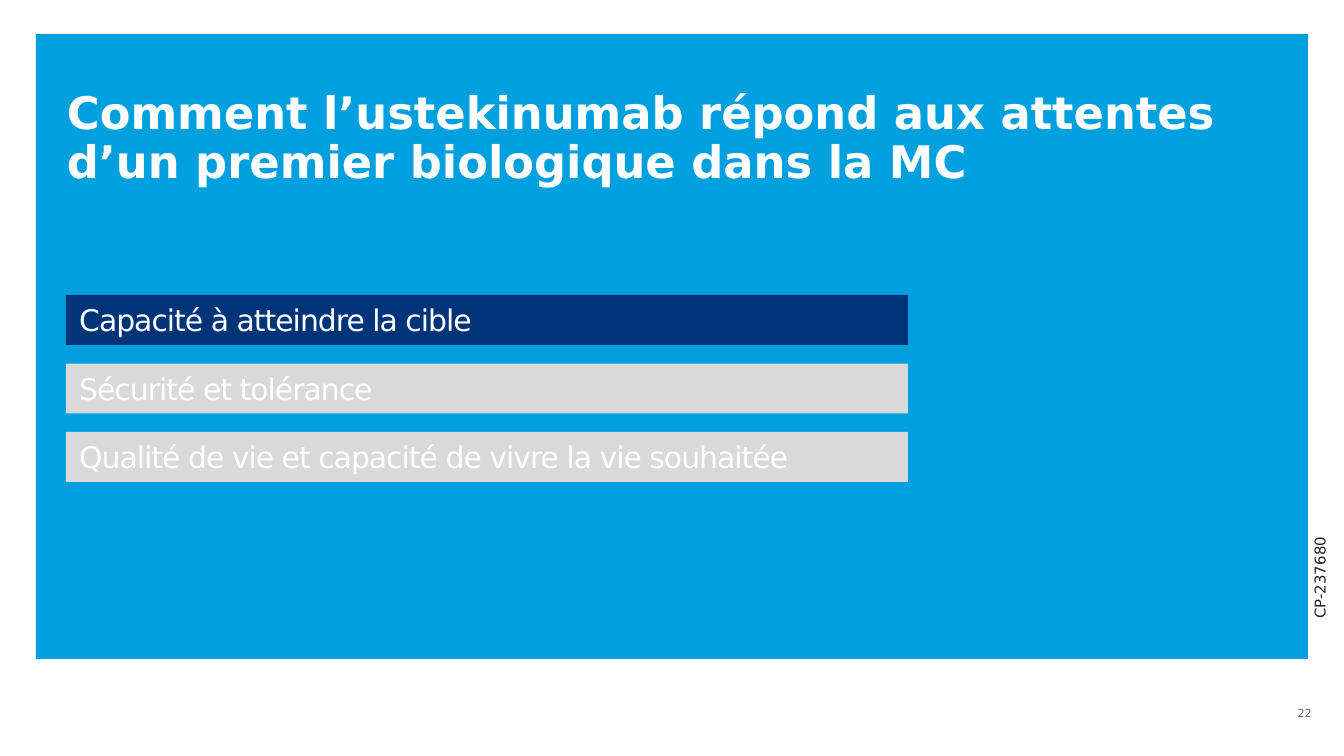
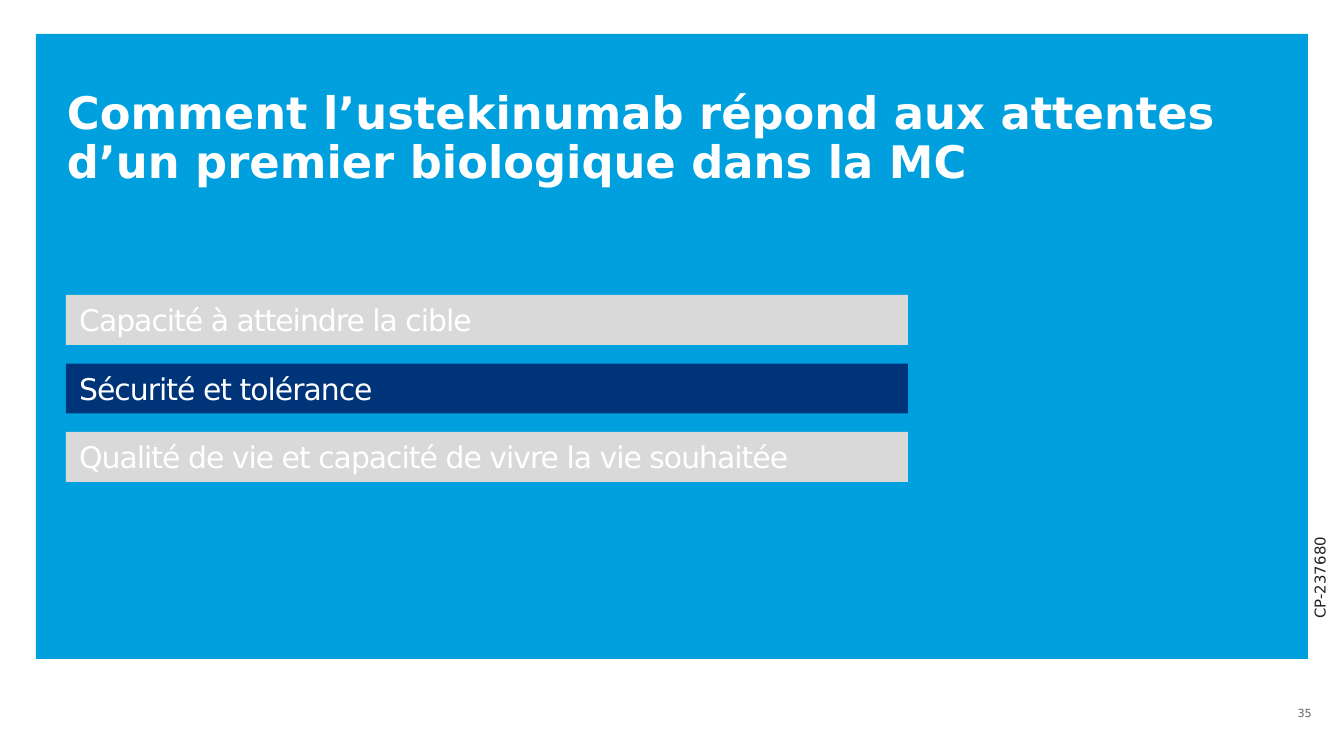
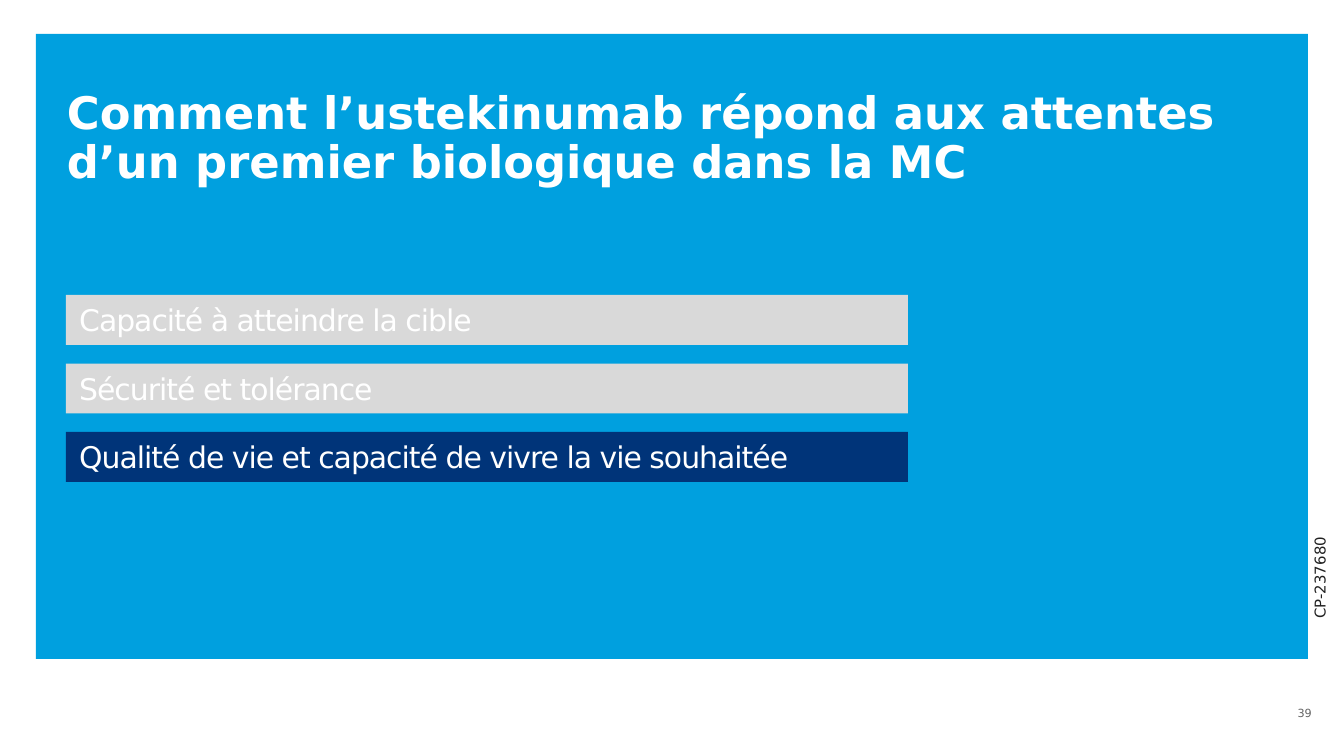
from pptx import Presentation, util as u
from pptx.dml.color import RGBColor
from pptx.enum import shapes, text

PX = 914400 / 134.4
FONT = "DejaVu Sans"
COLORS = {
    "panel": "00A0DF",
    "active": "003479",
    "inactive": "D9D9D9",
    "white": "FFFFFF",
    "page": "646464",
    "code": "212121",
}
TITLE = "Comment l’ustekinumab répond aux attentes d’un premier biologique dans la MC"
TOPICS = [
    "Capacité à atteindre la cible",
    "Sécurité et tolérance",
    "Qualité de vie et capacité de vivre la vie souhaitée",
]
PAGES = [22, 35, 39]
BAR_TOP, BAR_HEIGHT, BAR_PITCH = 295, 50, 68.5


def add_bar(slide, left, top, width, height, color):
    bar = slide.shapes.add_shape(
        shapes.MSO_SHAPE.RECTANGLE, *(round(v * PX) for v in (left, top, width, height)))
    bar.shadow.inherit = False
    bar.fill.solid()
    bar.fill.fore_color.rgb = RGBColor.from_string(COLORS[color])
    bar.line.fill.background()
    return bar


def write(slide, words, box=None, shape=None, size=16, color="white", bold=False,
          align="LEFT", anchor="MIDDLE", inset=True, line=1.0, tracking=0, rotation=0):
    """Write words in a shape, or in a new text box at box (px)."""
    if shape is None:
        shape = slide.shapes.add_textbox(*(round(v * PX) for v in box))
    shape.rotation = rotation
    frame = shape.text_frame
    frame.word_wrap = True
    frame.vertical_anchor = text.MSO_ANCHOR[anchor]
    if not inset:
        frame.margin_left = frame.margin_right = frame.margin_top = frame.margin_bottom = 0
    paragraph = frame.paragraphs[0]
    paragraph.alignment = text.PP_ALIGN[align]
    paragraph.line_spacing = line
    run = paragraph.add_run()
    run.text = words
    run.font.name = FONT
    run.font.size = u.Pt(size)
    run.font.bold = bold
    run.font.color.rgb = RGBColor.from_string(COLORS[color])
    if tracking:
        run.font._element.set("spc", str(tracking))


prs = Presentation()
prs.slide_width, prs.slide_height = round(1344 * PX), round(756 * PX)

# One agenda slide per topic, with that topic highlighted
for current, page in enumerate(PAGES):
    slide = prs.slides.add_slide(prs.slide_layouts[6])

    # Panel, title and page number
    add_bar(slide, 36, 34, 1272, 625, "panel")
    write(slide, TITLE, box=(67, 91, 1211, 98), size=24, bold=True,
          anchor="TOP", inset=False, line=0.9)
    write(slide, str(page), box=(1283, 695, 42, 36), size=6, color="page", align="RIGHT")

    # Topic bars
    for i, topic in enumerate(TOPICS):
        bar = add_bar(slide, 66, BAR_TOP + i * BAR_PITCH, 842, BAR_HEIGHT,
                      "active" if i == current else "inactive")
        write(slide, topic, shape=bar, tracking=-50)

    # Document code along the right edge
    write(slide, "CP-237680", box=(1228, 524, 184, 32), size=8, color="code",
          anchor="TOP", rotation=270)

prs.save("out.pptx")
